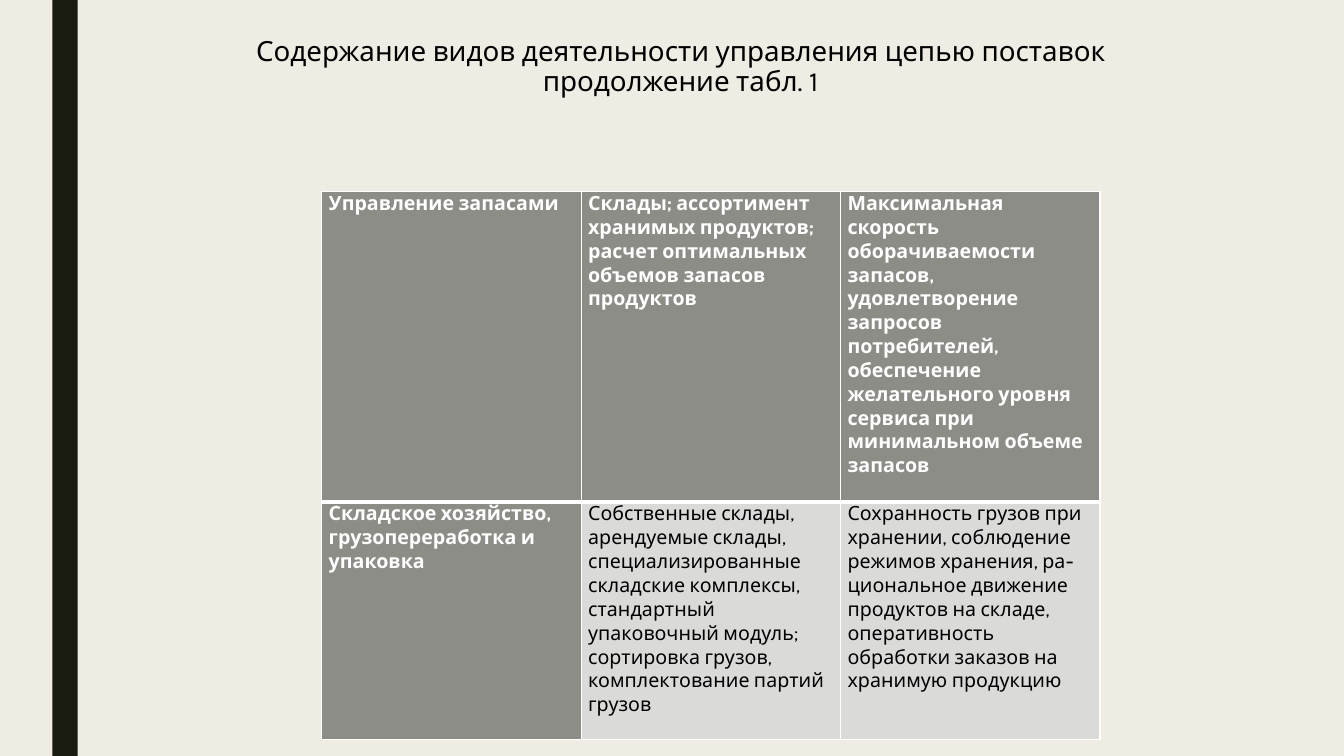
from lxml import etree
from pptx import Presentation
from pptx.dml.color import RGBColor
from pptx.enum import shapes, text
from pptx.oxml import ns
from pptx.util import Inches, Pt

CREAM = RGBColor(0xEF, 0xED, 0xE3)
DARK = RGBColor(0x19, 0x1B, 0x0E)
GRAY = RGBColor(0x8C, 0x8D, 0x86)
PALE = RGBColor(0xDA, 0xDB, 0xD9)
WHITE = RGBColor(0xFF, 0xFF, 0xFF)
BLACK = RGBColor(0, 0, 0)

TITLE = "Содержание видов деятельности управления цепью поставок\vпродолжение табл. 1"
ROWS = [
    ("Управление запасами",
     "Склады; ассортимент хранимых продуктов; расчет оптимальных объемов "
     "запасов продуктов",
     "Максимальная скорость оборачиваемости запасов, удовлетворение запросов "
     "потребителей, обеспечение желательного уровня сервиса при минимальном "
     "объеме запасов"),
    ("Складское хозяйство, грузопереработка и упаковка",
     "Собственные склады, арендуемые склады, специализированные складские "
     "комплексы, стандартный упаковочный модуль; сортировка грузов, "
     "комплектование партий грузов",
     "Сохранность грузов при хранении, соблюдение режимов хранения, "
     "ра-циональное движение продуктов на складе, оперативность обработки "
     "заказов на хранимую продукцию"),
]
HEIGHTS = (3.08, 2.36)


def add_bar(slide, x, y, w, h):
    bar = slide.shapes.add_shape(shapes.MSO_SHAPE.RECTANGLE, Inches(x), Inches(y),
                                 Inches(w), Inches(h))
    bar.shadow.inherit = False
    bar.fill.solid()
    bar.fill.fore_color.rgb = DARK
    bar.line.fill.background()


def add_title(slide, x, y, w, h):
    title = slide.shapes.title
    title.left, title.top = Inches(x), Inches(y)
    title.width, title.height = Inches(w), Inches(h)
    frame = title.text_frame
    frame.text = TITLE
    frame.word_wrap = True
    frame.auto_size = text.MSO_AUTO_SIZE.NONE
    frame.vertical_anchor = text.MSO_ANCHOR.TOP
    para = frame.paragraphs[0]
    para.alignment = text.PP_ALIGN.CENTER
    para.line_spacing = 0.89
    para.font.name, para.font.size = "Karla", Pt(19.8)
    para.font.color.rgb = BLACK


def add_edge(cell, side, width):
    line = etree.SubElement(cell._tc.get_or_add_tcPr(), ns.qn("a:ln" + side),
                            w=str(Pt(width)))
    fill = etree.SubElement(line, ns.qn("a:solidFill"))
    etree.SubElement(fill, ns.qn("a:srgbClr"), val=str(WHITE))


def fill_cell(cell, words, row, col):
    head = row == 0 or col == 0
    # Borders: a thick rule divides the two rows
    thick = {"T": row == 1, "B": row == 0}
    for side in "LRTB":
        add_edge(cell, side, 3 if thick.get(side) else 1)
    cell.fill.solid()
    cell.fill.fore_color.rgb = GRAY if head else PALE
    # Text
    cell.margin_left = cell.margin_right = Inches(0.07)
    cell.margin_top = cell.margin_bottom = 0
    cell.text = words
    font = cell.text_frame.paragraphs[0].font
    font.name, font.size, font.bold = "Cabin", Pt(14), head
    font.color.rgb = WHITE if head else BLACK


def add_grid(slide, x, y, w):
    count = len(ROWS[0])
    grid = slide.shapes.add_table(len(ROWS), count, Inches(x), Inches(y),
                                  Inches(w), Inches(sum(HEIGHTS))).table
    for col in grid.columns:
        col.width = Inches(w / count)
    for r, (height, row) in enumerate(zip(HEIGHTS, ROWS)):
        grid.rows[r].height = Inches(height)
        for c, words in enumerate(row):
            fill_cell(grid.cell(r, c), words, r, c)


def main():
    deck = Presentation()
    deck.slide_width, deck.slide_height = Inches(13.33), Inches(7.5)
    slide = deck.slides.add_slide(deck.slide_layouts[5])
    slide.background.fill.solid()
    slide.background.fill.fore_color.rgb = CREAM
    add_bar(slide, 0.52, 0, 0.25, 7.5)
    add_title(slide, 1.5, 0.33, 10.5, 0.75)
    add_grid(slide, 3.19, 1.9, 7.72)
    deck.save("out.pptx")


if __name__ == "__main__":
    main()
